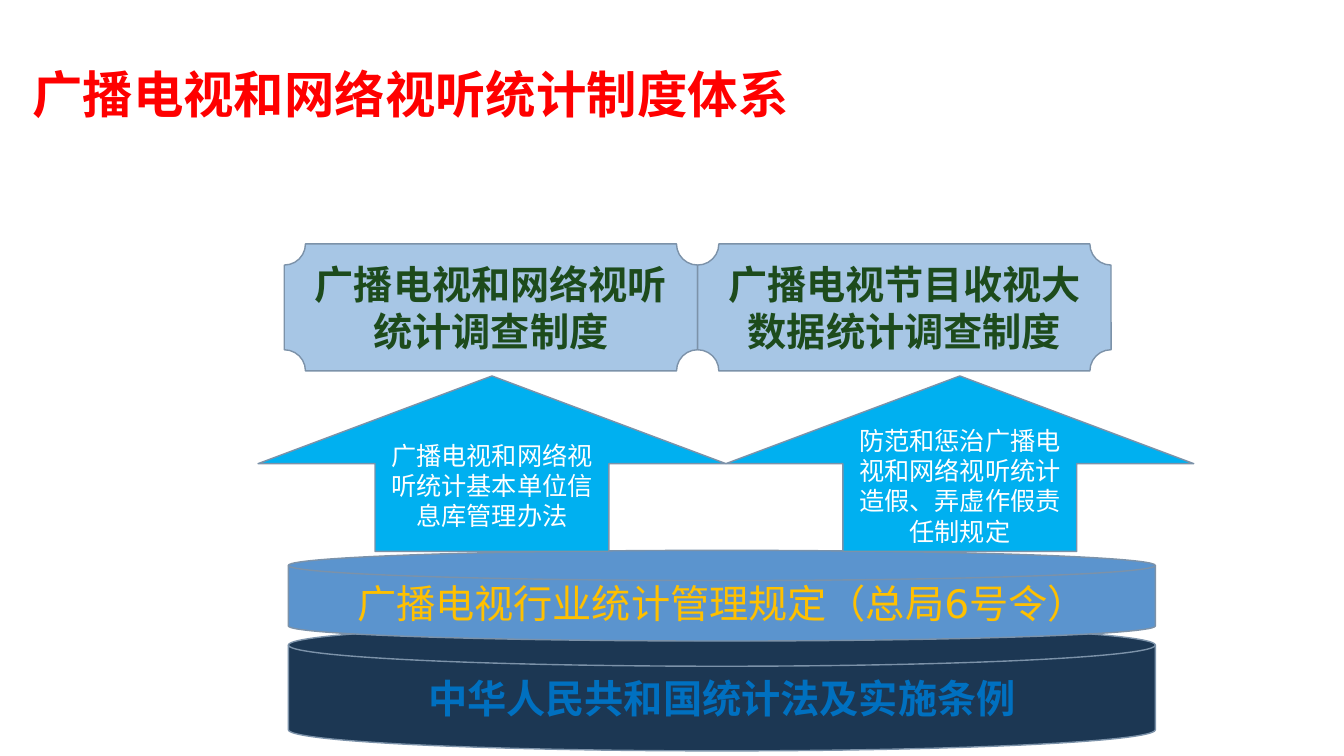
from lxml.etree import SubElement
from pptx import Presentation
from pptx.dml.color import RGBColor
from pptx.enum.shapes import MSO_SHAPE
from pptx.enum.text import MSO_ANCHOR, MSO_AUTO_SIZE, PP_ALIGN
from pptx.oxml.ns import qn
from pptx.util import Inches, Pt

CJK_FONT = "Noto Sans CJK SC"
LATIN_FONT = "DejaVu Sans"
OUTLINE = "7C92A9"

PLAQUE_LEFT, PLAQUE_WIDTH = 2.82, 4.1
ARROW_LEFT, ARROW_WIDTH = 2.56, 4.64

SURVEY_SYSTEMS = ["广播电视和网络视听统计调查制度", "广播电视节目收视大数据统计调查制度"]
SUPPORTING_RULES = [
    "广播电视和网络视听统计基本单位信息库管理办法",
    "防范和惩治广播电视和网络视听统计造假、弄虚作假责任制规定",
]


def rgb(code):
    return RGBColor.from_string(code)


def write(shape, text, size, color, align, bold=False, font=LATIN_FONT):
    frame = shape.text_frame
    frame.text = text
    frame.word_wrap = True
    frame.auto_size = MSO_AUTO_SIZE.NONE
    frame.vertical_anchor = MSO_ANCHOR.MIDDLE
    paragraph = frame.paragraphs[0]
    paragraph.alignment = align
    run = paragraph.runs[0]
    run.font.size = Pt(size)
    run.font.bold = bold
    run.font.color.rgb = rgb(color)
    run.font.name = font
    SubElement(run.font._element, qn("a:ea"), typeface=CJK_FONT)


def place(shape, left, top, width, height):
    shape.left, shape.top = Inches(left), Inches(top)
    shape.width, shape.height = Inches(width), Inches(height)


def add_title(slide, text):
    title = slide.shapes.title
    place(title, 0.22, 0.3, 12.45, 1.25)
    write(title, text, 36, "FF0000", PP_ALIGN.LEFT, True, CJK_FONT)


def add_block(slide, preset, box, fill, text, size, color, **style):
    block = slide.shapes.add_shape(preset, *map(Inches, box))
    block.shadow.inherit = False
    block.fill.solid()
    block.fill.fore_color.rgb = rgb(fill)
    block.line.color.rgb = rgb(OUTLINE)
    block.line.width = Pt(1)
    write(block, text, size, color, PP_ALIGN.CENTER, **style)


def add_foundation(slide, top, height, fill, text, color, **style):
    add_block(slide, MSO_SHAPE.FLOWCHART_MAGNETIC_DISK, (2.86, top, 8.6, height),
              fill, text, 28, color, **style)


def main():
    deck = Presentation()
    deck.slide_width, deck.slide_height = Inches(13.33), Inches(7.5)
    slide = deck.slides.add_slide(deck.slide_layouts[5])
    add_title(slide, "广播电视和网络视听统计制度体系")

    add_foundation(slide, 6.19, 1.26, "1C3753", "中华人民共和国统计法及实施条例",
                   "0070C0", bold=True, font=CJK_FONT)
    add_foundation(slide, 5.46, 0.9, "5B94CE", "广播电视行业统计管理规定（总局6号令）",
                   "FFC000")
    for column, rule in enumerate(SUPPORTING_RULES):
        box = (ARROW_LEFT + column * ARROW_WIDTH, 3.73, ARROW_WIDTH, 1.74)
        add_block(slide, MSO_SHAPE.UP_ARROW, box, "00B0F0", rule, 18, "FFFFFF")
    for column, system in enumerate(SURVEY_SYSTEMS):
        box = (PLAQUE_LEFT + column * PLAQUE_WIDTH, 2.42, PLAQUE_WIDTH, 1.26)
        add_block(slide, MSO_SHAPE.PLAQUE, box, "A7C6E5", system, 28, "1D4B1C", bold=True)

    deck.save("out.pptx")


if __name__ == "__main__":
    main()
